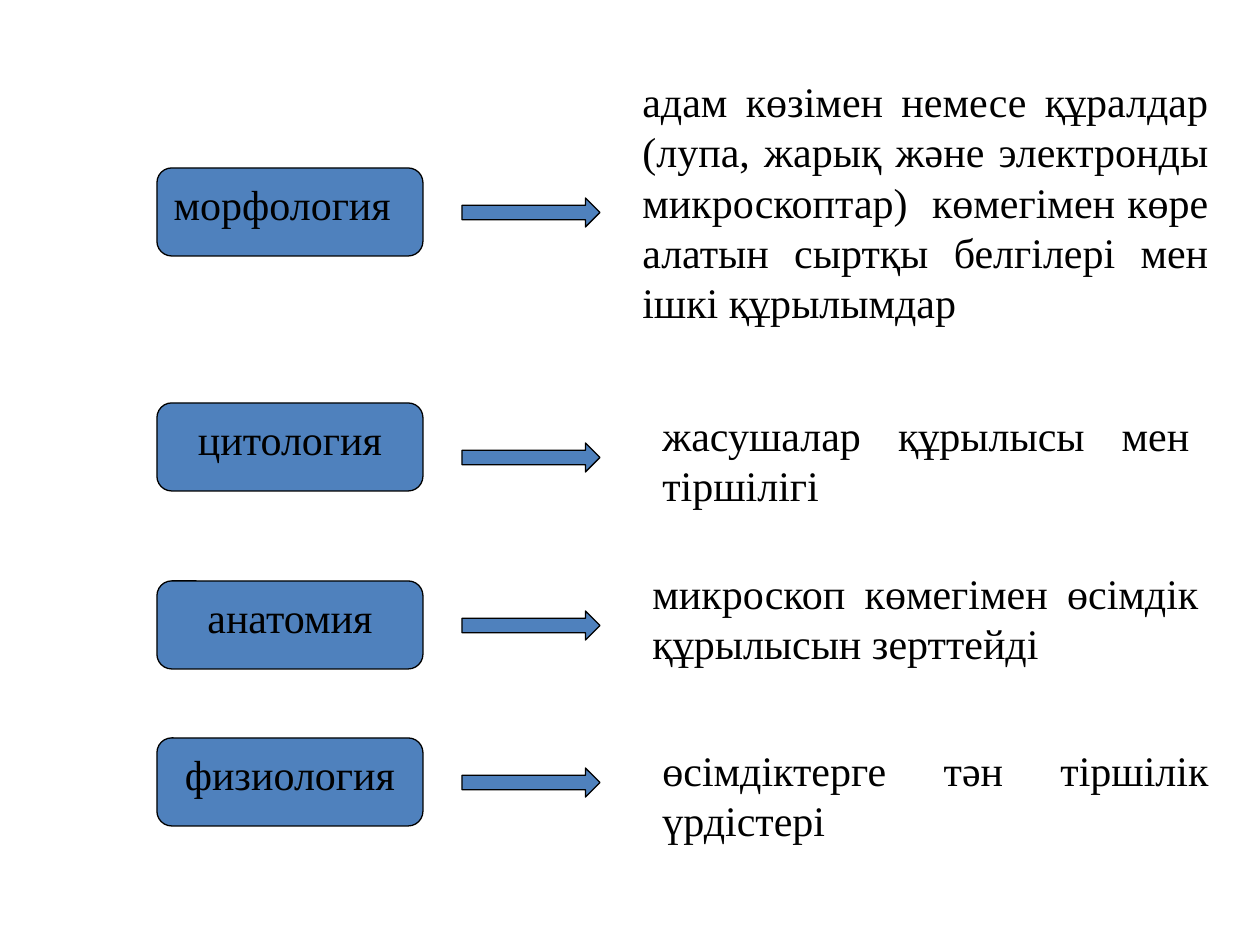
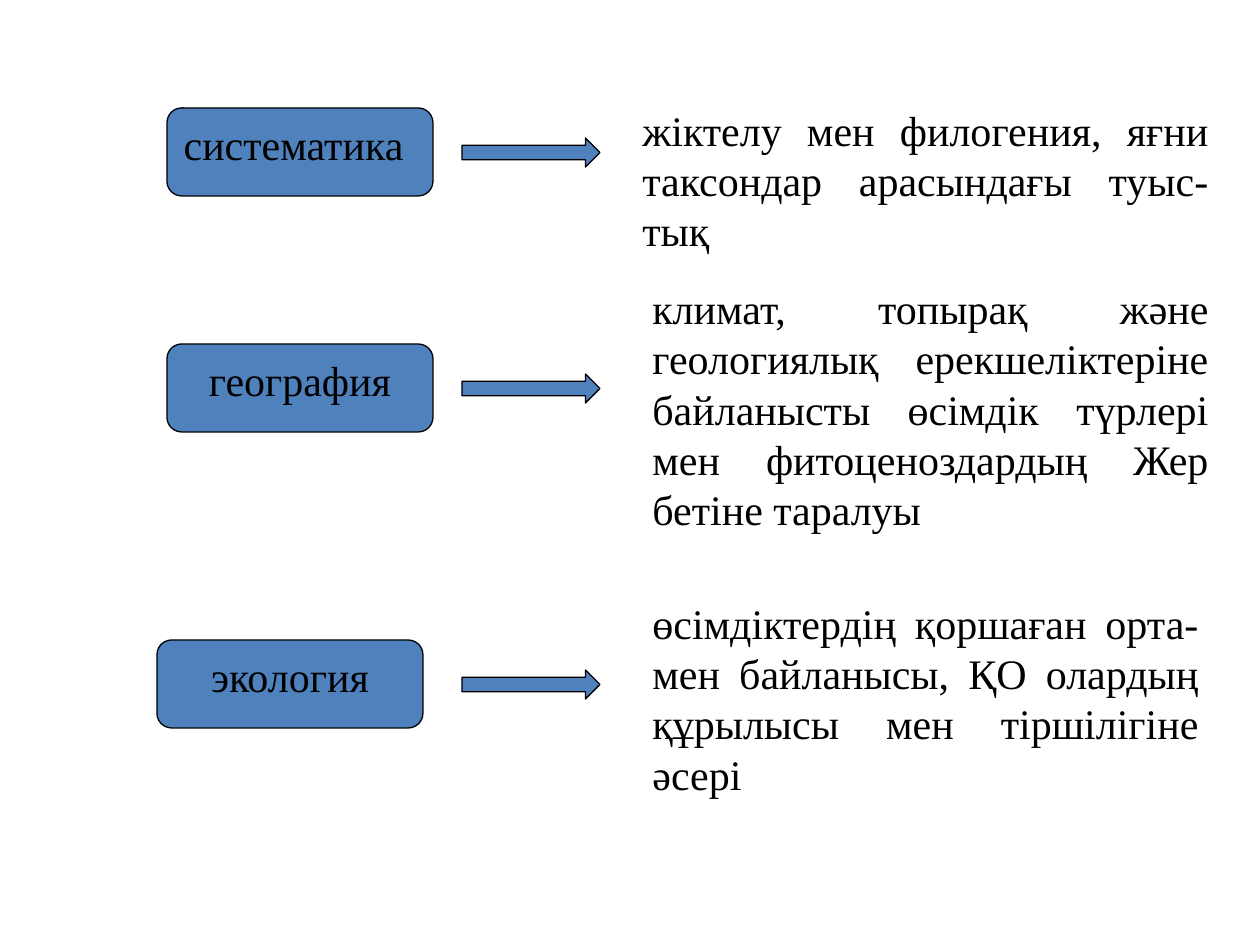
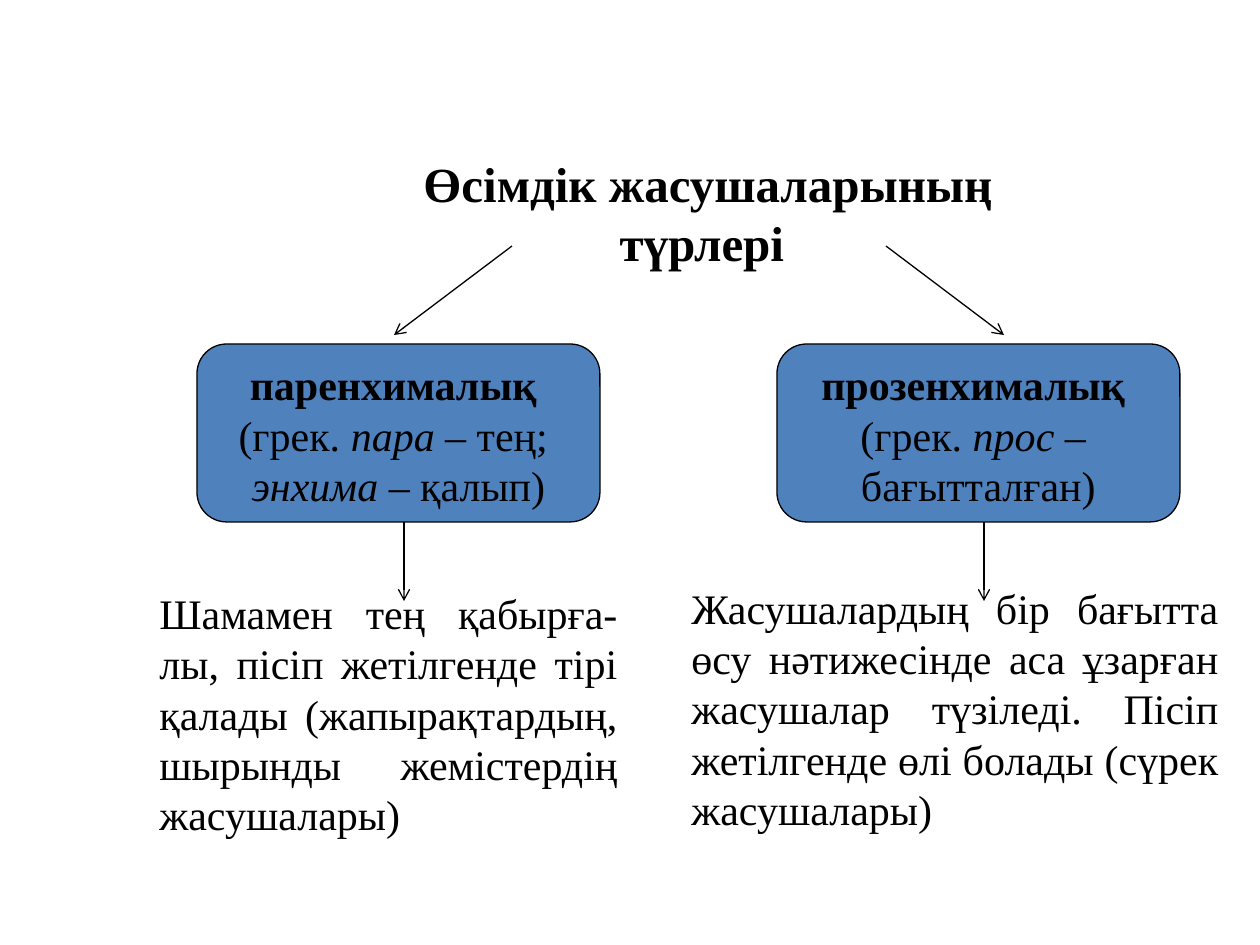
from dataclasses import dataclass

from lxml.etree import SubElement
from pptx import Presentation
from pptx.dml.color import RGBColor as Rgb
from pptx.enum.shapes import MSO_CONNECTOR as Link, MSO_SHAPE as Form
from pptx.enum.text import MSO_ANCHOR as Anchor, PP_ALIGN as Align
from pptx.oxml.ns import qn
from pptx.util import Inches, Pt


@dataclass(frozen=True)
class Theme:
    ink: Rgb = Rgb(0, 0, 0)
    blue: Rgb = Rgb(0x4F, 0x81, 0xBD)
    face: str = "Times New Roman"
    body: int = 24
    head: int = 28
    line: float = 0.75


theme = Theme()

TERMS = [
    [
        ((157, 168), "морфология", Align.LEFT, 30, (630, 69, 591, 5),
         "адам көзімен немесе құралдар (лупа, жарық және электронды "
         "микроскоптар)  көмегімен көре алатын сыртқы белгілері мен "
         "ішкі құрылымдар"),
        ((157, 403), "цитология", Align.CENTER, 40, (650, 403, 552, 2),
         "жасушалар құрылысы мен тіршілігі"),
        ((157, 581), "анатомия", Align.CENTER, 30, (640, 561, 571, 2),
         "микроскоп көмегімен өсімдік құрылысын зерттейді"),
        ((157, 738), "физиология", Align.CENTER, 30, (650, 738, 571, 2),
         "өсімдіктерге тән тіршілік үрдістері"),
    ],
    [
        ((167, 108), "систематика", Align.LEFT, 30, (630, 98, 591, 3),
         "жіктелу мен филогения, яғни таксондар арасындағы туыс-тық"),
        ((167, 344), "география", Align.CENTER, 30, (640, 276, 581, 5),
         "климат, топырақ және геологиялық ерекшеліктеріне байланысты "
         "өсімдік түрлері мен фитоценоздардың Жер бетіне таралуы"),
        ((157, 640), "экология", Align.CENTER, 30, (640, 591, 571, 4),
         "өсімдіктердің қоршаған орта-мен байланысы, ҚО олардың "
         "құрылысы мен тіршілігіне әсері"),
    ],
]

CELLS = [
    (197, (512, 394), "паренхималық ",
     [[("(грек. ", False), ("пара", True), (" – тең; ", False)],
      [("энхима", True), (" – қалып)", False)]],
     (147, 581, 483, 5),
     "Шамамен тең қабырға-лы, пісіп жетілгенде тірі қалады "
     "(жапырақтардың, шырынды жемістердің жасушалары)"),
    (777, (886, 1004), "прозенхималық ",
     [[("(грек. ", False), ("прос", True), (" – ", False)],
      [("бағытталған)", False)]],
     (679, 576, 552, 5),
     "Жасушалардың бір бағытта өсу нәтижесінде аса ұзарған жасушалар "
     "түзіледі. Пісіп жетілгенде өлі болады (сүрек жасушалары)"),
]


def px(*nums):
    return [Inches(num / 126) for num in nums]


def style(para, align, size=theme.body, bold=False):
    para.alignment = align
    font = para.font
    font.name, font.size, font.bold = theme.face, Pt(size), bold
    font.color.rgb = theme.ink


def add_form(slide, form, *area):
    shape = slide.shapes.add_shape(form, *px(*area))
    shape.shadow.inherit = False
    shape.fill.solid()
    shape.fill.fore_color.rgb = theme.blue
    shape.line.color.rgb = theme.ink
    shape.line.width = Pt(theme.line)
    return shape


def add_box(slide, area, text, align, bold=False):
    frame = add_form(slide, Form.ROUNDED_RECTANGLE, *area).text_frame
    frame.word_wrap = True
    frame.vertical_anchor = Anchor.TOP
    frame.text = text
    style(frame.paragraphs[0], align, bold=bold)
    return frame


def add_text(slide, area, text, align, **look):
    frame = slide.shapes.add_textbox(*px(*area)).text_frame
    frame.word_wrap = True
    frame.text = text
    style(frame.paragraphs[0], align, **look)


def add_note(slide, place, text):
    left, top, width, rows = place
    add_text(slide, (left, top, width, 13 + 51 * rows), text, Align.JUSTIFY)


def add_arrow(slide, *ends):
    arrow = slide.shapes.add_connector(Link.STRAIGHT, *px(*ends))
    arrow.line.color.rgb = theme.ink
    arrow.line.width = Pt(theme.line)
    SubElement(arrow.line._get_or_add_ln(), qn("a:tailEnd"), type="arrow")
    SubElement(arrow._element.spPr, qn("a:effectLst"))


def add_terms(slide, rows):
    for (left, top), word, align, drop, place, text in rows:
        add_box(slide, (left, top, 266, 88), word, align)
        add_form(slide, Form.RIGHT_ARROW, 462, top + drop, 138, 29)
        add_note(slide, place, text)


def add_cells(slide):
    add_text(slide, (393, 147, 630, 131), "Өсімдік жасушаларының түрлері ",
             Align.CENTER, size=theme.head, bold=True)
    for left, (start, end), name, lines, place, text in CELLS:
        add_arrow(slide, start, 246, end, 335)
        add_arrow(slide, left + 207, 522, left + 207, 601)
        add_note(slide, place, text)
        frame = add_box(slide, (left, 344, 403, 178), name, Align.CENTER, True)
        for line in lines:
            para = frame.add_paragraph()
            style(para, Align.CENTER)
            for part, slant in line:
                run = para.add_run()
                run.text = part
                run.font.italic = slant


def main():
    deck = Presentation()
    deck.slide_width, deck.slide_height = px(1260, 945)
    blank = deck.slide_layouts[6]
    for rows in TERMS:
        add_terms(deck.slides.add_slide(blank), rows)
    add_cells(deck.slides.add_slide(blank))
    deck.save("out.pptx")


if __name__ == "__main__":
    main()
